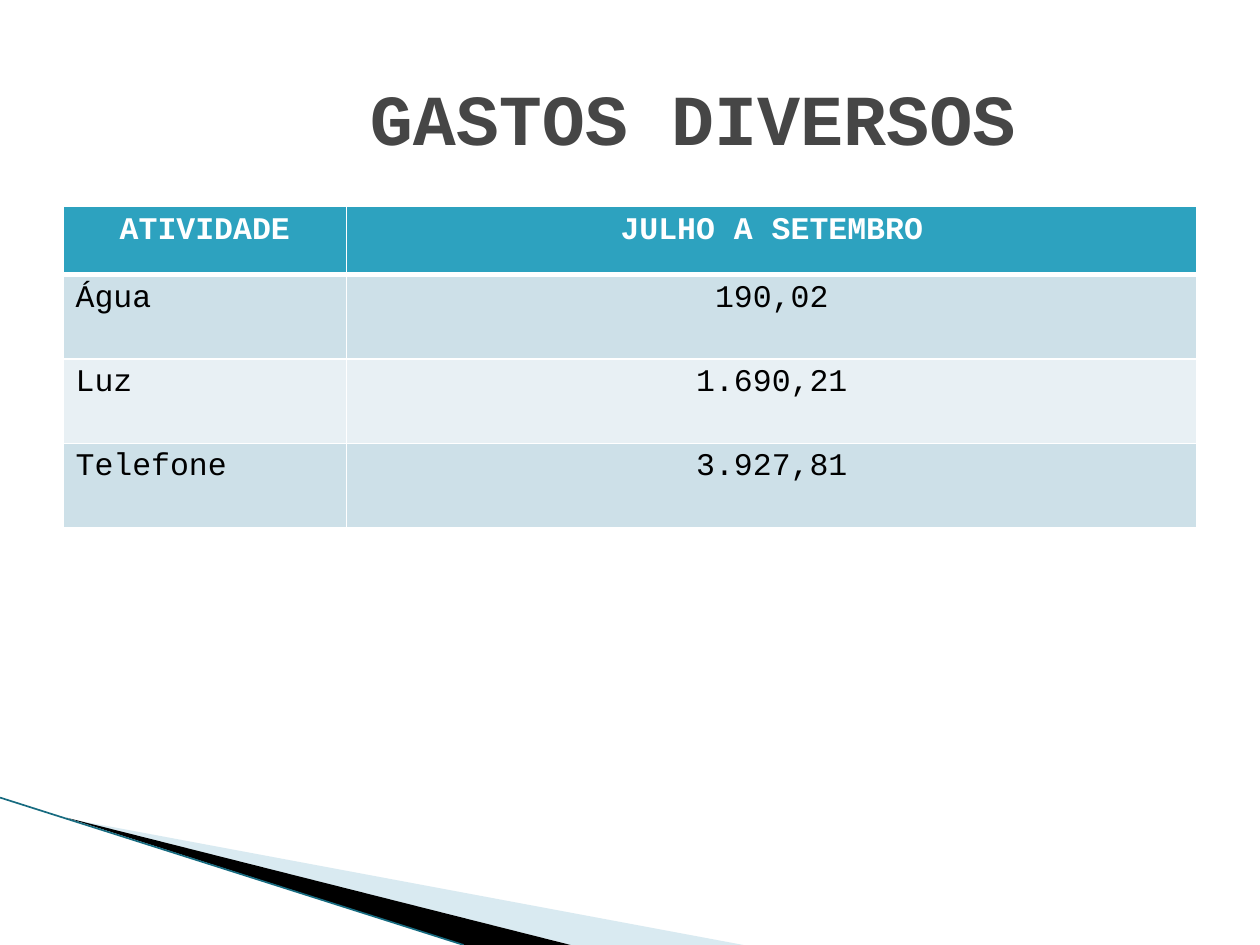
from typing import NamedTuple, Optional

from lxml import etree
from pptx import Presentation
from pptx.dml.color import RGBColor
from pptx.enum import text
from pptx.enum.shapes import MSO_CONNECTOR
from pptx.oxml.ns import qn
from pptx.util import Inches, Pt

FONT = "Courier New"
WHITE = RGBColor(0xFF, 0xFF, 0xFF)
BLACK = RGBColor(0, 0, 0)
TITLE_GREY = RGBColor(0x46, 0x46, 0x46)
HEADER_TEAL = RGBColor(0x2D, 0xA2, 0xBF)
BAND_DARK = RGBColor(0xCD, 0xE0, 0xE8)
BAND_LIGHT = RGBColor(0xE8, 0xF0, 0xF4)
WEDGE_BLUE = RGBColor(0xA0, 0xCB, 0xDC)
EDGE_TEAL = RGBColor(0x17, 0x6B, 0x80)


class Wedge(NamedTuple):
    points: list[tuple[float, float]]
    color: RGBColor
    opacity: Optional[int] = None


WEDGES = [
    Wedge([(0.55, 6.5), (5.9, 7.5), (4.53, 7.5)], WEDGE_BLUE, 40),
    Wedge([(0.53, 6.49), (4.53, 7.5), (3.68, 7.5)], BLACK),
]

EXPENSES = [
    ("ATIVIDADE", "JULHO A SETEMBRO"),
    ("Água", "190,02"),
    ("Luz", "1.690,21"),
    ("Telefone", "3.927,81"),
]
COLUMN_WIDTHS = (2.25, 6.75)
HEADER_HEIGHT, ROW_HEIGHT = 0.54, 0.67


def draw_wedge(slide, wedge: Wedge) -> None:
    points = [(Inches(x), Inches(y)) for x, y in wedge.points]
    builder = slide.shapes.build_freeform(*points[0])
    builder.add_line_segments(points[1:], close=True)
    shape = builder.convert_to_shape()
    shape.shadow.inherit = False
    shape.fill.solid()
    shape.fill.fore_color.rgb = wedge.color
    shape.line.fill.background()
    if wedge.opacity is not None:
        color = shape._element.spPr.find(qn("a:solidFill"))[0]
        etree.SubElement(color, qn("a:alpha"), val=str(wedge.opacity * 1000))


def set_borders(cell, bottom_width: float) -> None:
    properties = cell._tc.get_or_add_tcPr()
    widths = {"a:lnL": 1, "a:lnR": 1, "a:lnT": 1, "a:lnB": bottom_width}
    for index, (tag, width) in enumerate(widths.items()):
        border = etree.Element(qn(tag), w=str(Pt(width)))
        fill = etree.SubElement(border, qn("a:solidFill"))
        etree.SubElement(fill, qn("a:srgbClr"), val=str(WHITE))
        properties.insert(index, border)


def fill_cell(cell, wording: str, row: int, column: int) -> None:
    is_header = row == 0
    cell.text = wording
    cell.fill.solid()
    band = BAND_DARK if row % 2 else BAND_LIGHT
    cell.fill.fore_color.rgb = HEADER_TEAL if is_header else band
    set_borders(cell, 3 if is_header else 1)
    paragraph = cell.text_frame.paragraphs[0]
    centred = is_header or column == 1
    paragraph.alignment = text.PP_ALIGN.CENTER if centred else text.PP_ALIGN.LEFT
    paragraph.font.name = FONT
    paragraph.font.size = Pt(18)
    paragraph.font.bold = is_header
    paragraph.font.color.rgb = WHITE if is_header else BLACK


def draw_expenses(slide) -> None:
    heights = [HEADER_HEIGHT] + [ROW_HEIGHT] * (len(EXPENSES) - 1)
    table = slide.shapes.add_table(
        len(EXPENSES), len(COLUMN_WIDTHS), Inches(0.5), Inches(1.64),
        Inches(sum(COLUMN_WIDTHS)), Inches(sum(heights))).table
    for column, width in zip(table.columns, COLUMN_WIDTHS):
        column.width = Inches(width)
    for row, (entries, height) in enumerate(zip(EXPENSES, heights)):
        table.rows[row].height = Inches(height)
        for column, wording in enumerate(entries):
            fill_cell(table.cell(row, column), wording, row, column)


def draw_title(slide) -> None:
    title = slide.shapes.title
    title.left, title.top = Inches(0.5), Inches(0.3)
    title.width, title.height = Inches(9), Inches(1.25)
    frame = title.text_frame
    frame.text = "GASTOS DIVERSOS"
    frame.auto_size = text.MSO_AUTO_SIZE.NONE
    frame.vertical_anchor = text.MSO_ANCHOR.MIDDLE
    frame.margin_left = Inches(1.1)  # moves the centred title to the right
    paragraph = frame.paragraphs[0]
    paragraph.alignment = text.PP_ALIGN.CENTER
    paragraph.font.name = FONT
    paragraph.font.size = Pt(41)
    paragraph.font.bold = True
    paragraph.font.color.rgb = TITLE_GREY


def main() -> None:
    deck = Presentation()
    deck.slide_width, deck.slide_height = Inches(10), Inches(7.5)
    slide = deck.slides.add_slide(deck.slide_layouts[5])

    # Corner decoration
    for wedge in WEDGES:
        draw_wedge(slide, wedge)
    edge = slide.shapes.add_connector(
        MSO_CONNECTOR.STRAIGHT, Inches(0), Inches(6.33), Inches(3.68), Inches(7.5))
    edge.line.color.rgb = EDGE_TEAL
    edge.line.width = Pt(0.95)
    etree.SubElement(edge._element.spPr, qn("a:effectLst"))

    # Content
    draw_expenses(slide)
    draw_title(slide)
    deck.save("out.pptx")


if __name__ == "__main__":
    main()
